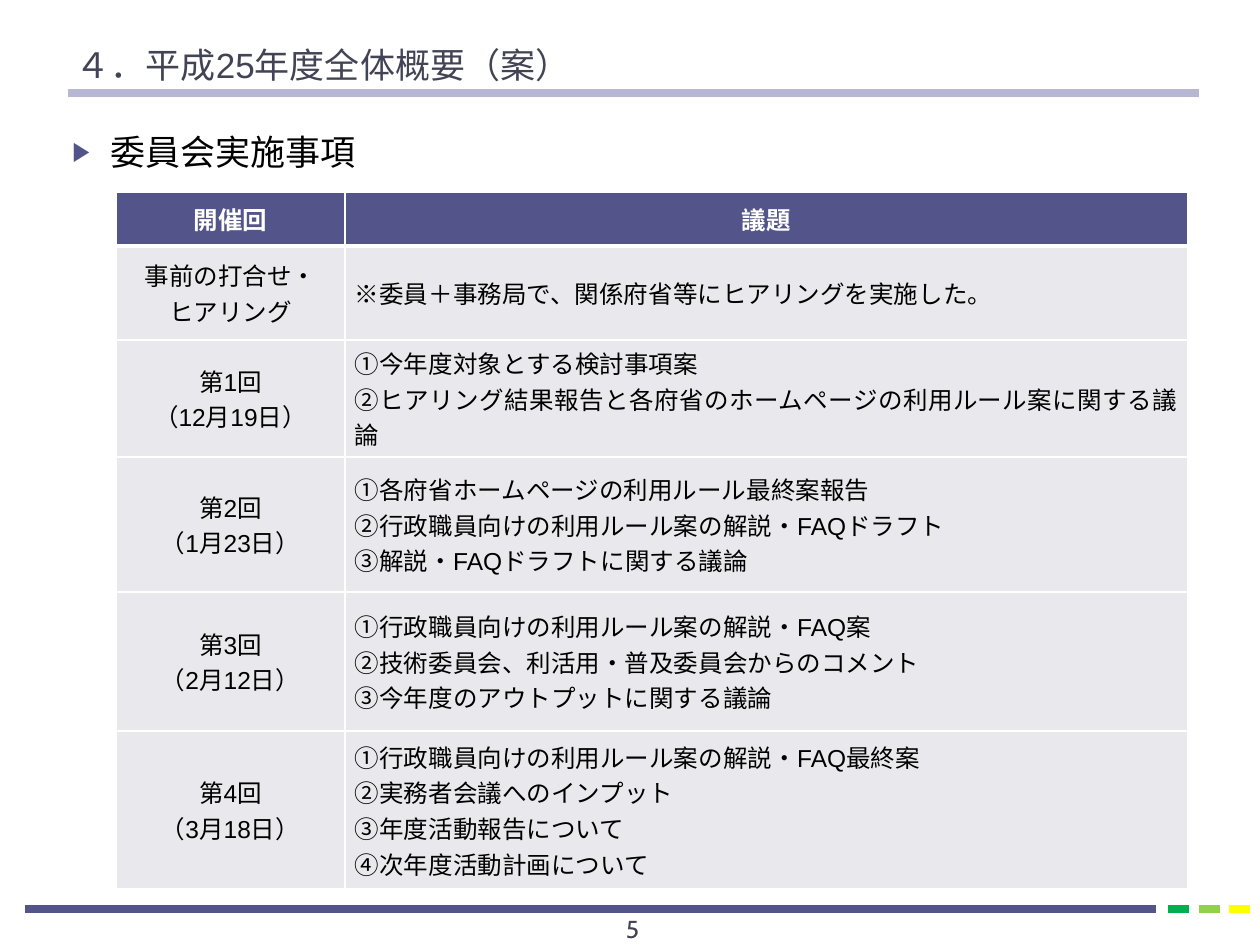
from pptx import Presentation
from pptx.dml.color import RGBColor
from pptx.enum.shapes import MSO_CONNECTOR
from pptx.enum.text import MSO_ANCHOR as ANCHOR, PP_ALIGN as ALIGN
from pptx.oxml.ns import qn
from pptx.util import Pt
from lxml.etree import SubElement

PX = 914400 / 126
INDIGO, SLATE, LAVENDER = "53548A", "424456", "B7B7D4"
WHITE, BLACK, PALE = "FFFFFF", "000000", "E9E9ED"


def px(*values):
    return [round(v * PX) for v in values]


def write(tf, text, size=14, color=BLACK, font="Arial", bold=False, align=ALIGN.LEFT,
          anchor=ANCHOR.TOP):
    """Fill a text frame with one paragraph per line of text."""
    tf.word_wrap = True
    tf.vertical_anchor = anchor
    for i, line in enumerate(text.split("\n")):
        p = tf.paragraphs[0] if i == 0 else tf.add_paragraph()
        p.alignment = align
        r = p.add_run()
        r.text = line
        r.font.size, r.font.bold, r.font.name = Pt(size), bold, font
        r.font.color.rgb = RGBColor.from_string(color)


prs = Presentation()
prs.slide_width, prs.slide_height = px(1260, 945)
s = prs.slides.add_slide(prs.slide_layouts[5])

# Rules: x from, x to, y, colour, width
rules = [
    (25, 1156, 909, INDIGO, 4.5),
    (1168, 1189, 909, "00B050", 4.5),
    (1199, 1220, 909, "92D050", 4.5),
    (1229, 1250, 909, "FFFF00", 4.5),
    (68, 1199, 93, LAVENDER, 4.25),
]
for x1, x2, y, color, width in rules:
    line = s.shapes.add_connector(MSO_CONNECTOR.STRAIGHT, *px(x1, y, x2, y))
    line.line.color.rgb = RGBColor.from_string(color)
    line.line.width = Pt(width)
    SubElement(line._element.spPr, qn("a:effectLst"))

title = s.shapes.title
title.left, title.top, title.width, title.height = px(63, 1, 1134, 91)
write(title.text_frame, "４．平成25年度全体概要（案）", size=20, color=SLATE,
      anchor=ANCHOR.BOTTOM)

number = s.shapes.add_textbox(*px(496, 908, 273, 50))
write(number.text_frame, "5", color=SLATE, font="Cabin", align=ALIGN.CENTER)

heading = s.shapes.add_textbox(*px(60, 142, 1169, 123))
p = heading.text_frame.paragraphs[0]
pPr = p._p.get_or_add_pPr()
indent, = px(38)
pPr.set("marL", str(indent))
pPr.set("indent", str(-indent))
SubElement(SubElement(pPr, qn("a:buClr")), qn("a:srgbClr"), val=INDIGO)
SubElement(pPr, qn("a:buSzPct"), val="76000")
SubElement(pPr, qn("a:buFont"), typeface="Arial")
SubElement(pPr, qn("a:buChar"), char="▶")
p.line_spacing = Pt(14)
write(heading.text_frame, "委員会実施事項", size=20, font="Cabin")

# Row height, meeting, agenda
rows = [
    (54, "開催回", "議題"),
    (94, "事前の打合せ・\nヒアリング", "※委員＋事務局で、関係府省等にヒアリングを実施した。"),
    (117, "第1回\n（12月19日）",
     "①今年度対象とする検討事項案\n"
     "②ヒアリング結果報告と各府省のホームページの利用ルール案に関する議論"),
    (135, "第2回\n（1月23日）",
     "①各府省ホームページの利用ルール最終案報告\n"
     "②行政職員向けの利用ルール案の解説・FAQドラフト\n"
     "③解説・FAQドラフトに関する議論"),
    (139, "第3回\n（2月12日）",
     "①行政職員向けの利用ルール案の解説・FAQ案\n"
     "②技術委員会、利活用・普及委員会からのコメント\n"
     "③今年度のアウトプットに関する議論"),
    (158, "第4回\n（3月18日）",
     "①行政職員向けの利用ルール案の解説・FAQ最終案\n"
     "②実務者会議へのインプット\n"
     "③年度活動報告について\n"
     "④次年度活動計画について"),
]
widths = px(229, 843)
table_height, = px(sum(row[0] for row in rows))
table = s.shapes.add_table(len(rows), 2, *px(116, 192), sum(widths), table_height).table
for column, width in zip(table.columns, widths):
    column.width = width

for i, (height, *texts) in enumerate(rows):
    table.rows[i].height, = px(height)
    header = i == 0
    for j, text in enumerate(texts):
        cell = table.cell(i, j)
        cell.margin_left, cell.margin_right = px(10, 10)
        cell.margin_top, cell.margin_bottom = px(5, 5)
        cell.vertical_anchor = ANCHOR.MIDDLE
        tcPr = cell._tc.get_or_add_tcPr()
        for side in "LRTB":
            thick = (header and side == "B") or (i == 1 and side == "T")
            ln = SubElement(tcPr, qn(f"a:ln{side}"), w=str(Pt(3 if thick else 1)))
            SubElement(SubElement(ln, qn("a:solidFill")), qn("a:srgbClr"), val=WHITE)
        cell.fill.solid()
        cell.fill.fore_color.rgb = RGBColor.from_string(INDIGO if header else PALE)
        write(cell.text_frame, text, color=WHITE if header else BLACK, bold=header,
              align=ALIGN.CENTER if header or j == 0 else ALIGN.JUSTIFY,
              anchor=ANCHOR.MIDDLE)

prs.save("out.pptx")
